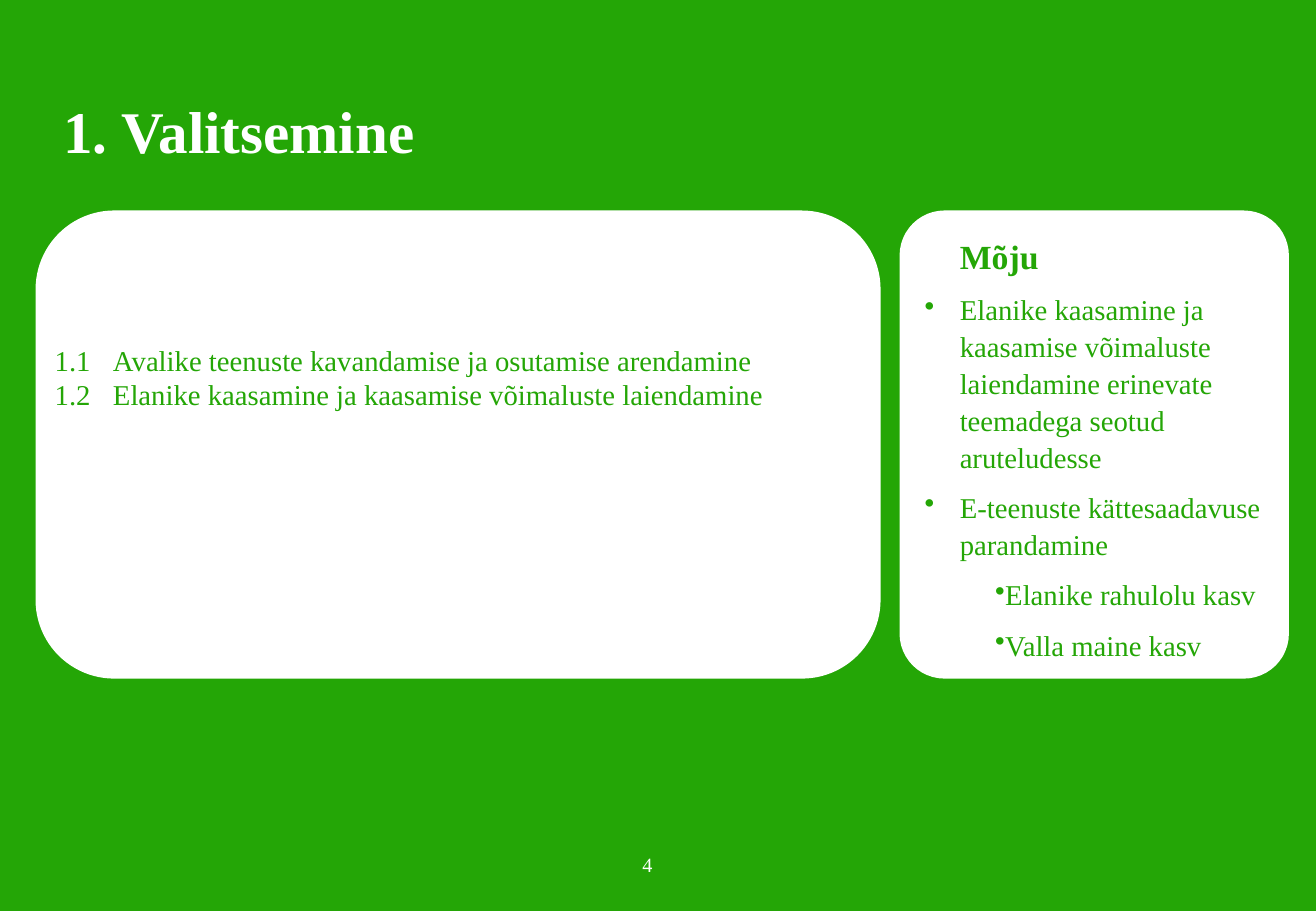
from pptx import Presentation
from pptx import util as u
from pptx.dml.color import RGBColor
from pptx.enum import shapes, text
from pptx.oxml.ns import qn
from lxml import etree

PX = 9144  # 100 px to the inch
GREEN = RGBColor(0x24, 0xA6, 0x06)
WHITE = RGBColor(0xFF, 0xFF, 0xFF)
FONT = "Times New Roman"


def set_text(shape, lines, size, color, bold=False, align=text.PP_ALIGN.LEFT,
             anchor=text.MSO_ANCHOR.MIDDLE, inset=5):
    """Fill a shape with one paragraph per line and return its paragraphs."""
    frame = shape.text_frame
    frame.text = "\n".join(lines)
    frame.word_wrap = True
    frame.vertical_anchor = anchor
    frame.margin_left = frame.margin_right = inset * PX
    frame.margin_top = frame.margin_bottom = 5 * PX
    for paragraph in frame.paragraphs:
        paragraph.alignment = align
        font = paragraph.font
        font.name, font.size, font.bold = FONT, u.Pt(size), bold
        font.color.rgb = color
    return frame.paragraphs


def set_indent(paragraph, margin, indent, bullet=None):
    """Set the left margin and first-line indent in px, and a bullet if given."""
    properties = paragraph._p.get_or_add_pPr()
    properties.set("marL", str(margin * PX))
    properties.set("indent", str(indent * PX))
    if bullet:
        mark = etree.Element(qn("a:buChar"), char=bullet)
        properties.find(qn("a:defRPr")).addprevious(mark)


presentation = Presentation()
presentation.slide_width, presentation.slide_height = 1083 * PX, 750 * PX
slide = presentation.slides.add_slide(presentation.slide_layouts[5])
slide.background.fill.solid()
slide.background.fill.fore_color.rgb = GREEN

# White panels
for left, width, rounding in ((30, 694, 0.167), (741, 319, 0.114)):
    panel = slide.shapes.add_shape(shapes.MSO_SHAPE.ROUNDED_RECTANGLE,
                                   left * PX, 174 * PX, width * PX, 384 * PX)
    panel.adjustments[0] = rounding
    panel.shadow.inherit = False
    panel.fill.solid()
    panel.fill.fore_color.rgb = WHITE
    panel.line.color.rgb = WHITE
    panel.line.width = u.Pt(1)

# Title
title = slide.shapes.title
title.left, title.top, title.width, title.height = 47 * PX, 26 * PX, 989 * PX, 116 * PX
heading = set_text(title, ["1. Valitsemine"], 35, WHITE, bold=True,
                   anchor=text.MSO_ANCHOR.BOTTOM)[0]
heading.line_spacing = 0.9

# Goals
goals = slide.shapes.add_textbox(40 * PX, 267 * PX, 652 * PX, 87 * PX)
goal_lines = ["1.1\tAvalike teenuste kavandamise ja osutamise arendamine",
              "1.2\tElanike kaasamine ja kaasamise võimaluste laiendamine"]
for paragraph in set_text(goals, goal_lines, 17, GREEN, align=text.PP_ALIGN.JUSTIFY):
    set_indent(paragraph, 48, -48)

# Impact: text, left margin, first-line indent, bullet
impact_items = [
    ("Mõju", 0, 29, None),
    ("Elanike kaasamine ja kaasamise võimaluste laiendamine erinevate "
     "teemadega seotud aruteludesse", 29, -29, "•"),
    ("E-teenuste kättesaadavuse parandamine", 29, -29, "•"),
    ("Elanike rahulolu kasv", 29, 29, "•"),
    ("Valla maine kasv", 29, 29, "•"),
]
impact = slide.shapes.add_textbox(751 * PX, 187 * PX, 318 * PX, 364 * PX)
impact_paragraphs = set_text(impact, [item[0] for item in impact_items], 17, GREEN,
                             anchor=text.MSO_ANCHOR.TOP, inset=10)
for paragraph, (_, margin, indent, bullet) in zip(impact_paragraphs, impact_items):
    paragraph.line_spacing = 1.07
    paragraph.space_after = u.Pt(8)
    set_indent(paragraph, margin, indent, bullet)
impact_paragraphs[0].font.size = u.Pt(20)
impact_paragraphs[0].font.bold = True

# Page number
page_number = slide.shapes.add_textbox(523 * PX, 697 * PX, 19 * PX, 30 * PX)
set_text(page_number, ["4"], 12, WHITE, align=text.PP_ALIGN.RIGHT)
page_number.text_frame.word_wrap = False

presentation.save("out.pptx")
